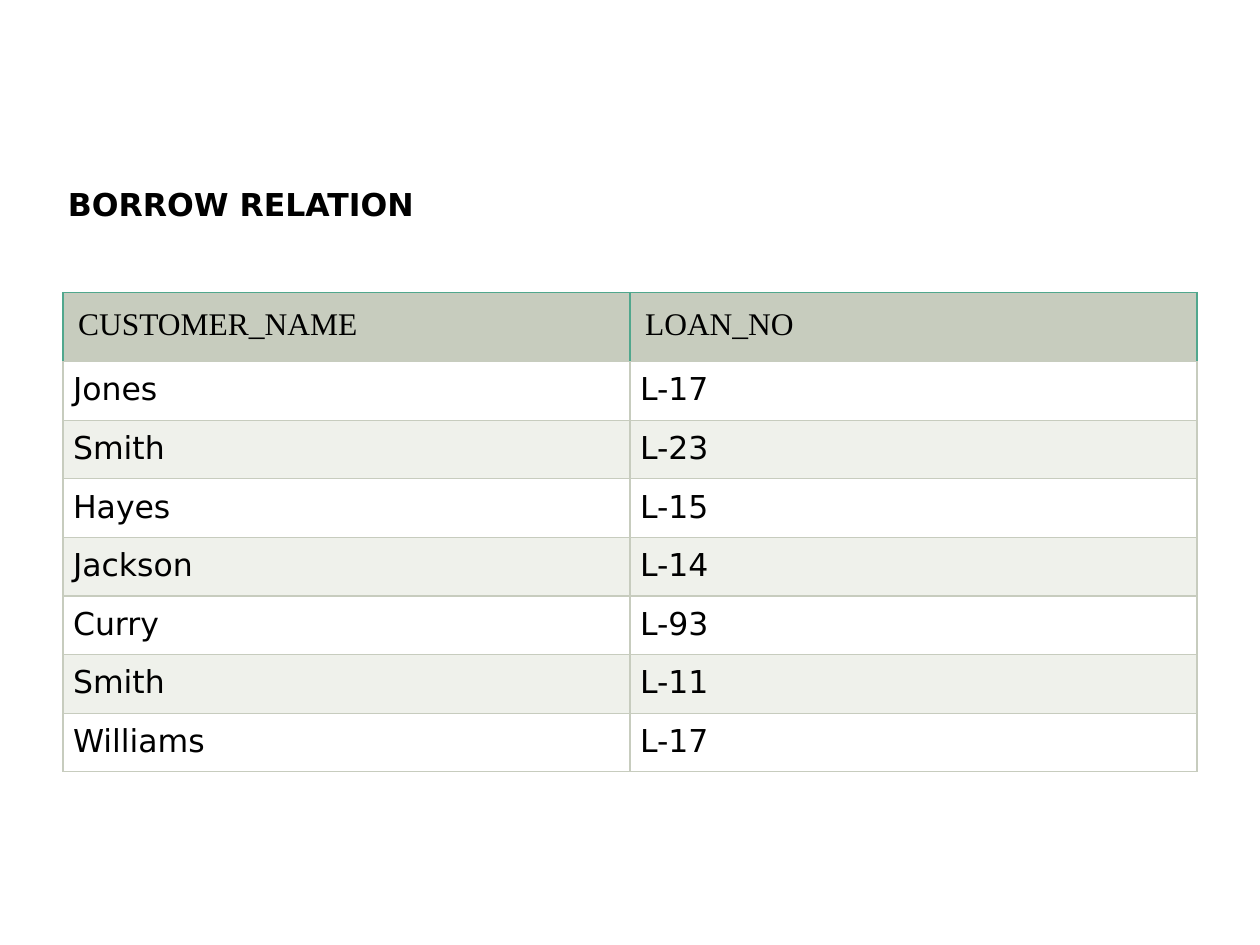
"""Build a slide that shows the borrow relation as a two-column table."""
from dataclasses import dataclass

from lxml import etree
from pptx import Presentation
from pptx.dml.color import RGBColor
from pptx.enum.text import MSO_AUTO_SIZE
from pptx.oxml.ns import qn
from pptx.util import Inches, Pt

FIT_SHAPE = MSO_AUTO_SIZE.SHAPE_TO_FIT_TEXT
SLIDE_WIDTH, SLIDE_HEIGHT = Inches(10), Inches(7.5)


@dataclass(frozen=True)
class Theme:
    """Colours, fonts and type sizes of the slide."""
    text: str = "000000"
    header: str = "C7CCBE"
    accent: str = "50A78D"
    bands: tuple[str, str] = ("FFFFFF", "EFF1EB")
    body_font: str = "DejaVu Sans"
    header_font: str = "Times New Roman"
    size: float = 18
    border: float = 0.75


THEME = Theme()


@dataclass(frozen=True)
class RowStyle:
    """Look of one table row, with lengths in inches."""
    fill: str
    font: str
    height: float
    inset: float
    edge: str


@dataclass(frozen=True)
class Loan:
    """One tuple of the borrow relation."""
    customer: str
    number: str


HEADER = Loan("CUSTOMER_NAME", "LOAN_NO")
LOANS = [
    Loan("Jones", "L-17"),
    Loan("Smith", "L-23"),
    Loan("Hayes", "L-15"),
    Loan("Jackson", "L-14"),
    Loan("Curry", "L-93"),
    Loan("Smith", "L-11"),
    Loan("Williams", "L-17"),
]
HEADER_STYLE = RowStyle(THEME.header, THEME.header_font, 0.55, 0.12, THEME.accent)
BAND_STYLES = [RowStyle(fill, THEME.body_font, 0.465, 0.08, THEME.header)
               for fill in THEME.bands]


def add_run(paragraph, text: str, font_name: str, bold: bool = False) -> None:
    """Add one run in the theme's size and text colour."""
    run = paragraph.add_run()
    run.text = text
    run.font.name = font_name
    run.font.size = Pt(THEME.size)
    run.font.bold = bold
    run.font.color.rgb = RGBColor.from_string(THEME.text)


def set_borders(cell, edge: str) -> None:
    """Line the cell with the edge colour, and its bottom with the header colour."""
    properties = cell._tc.get_or_add_tcPr()
    colors = {"a:lnL": edge, "a:lnR": edge, "a:lnT": edge, "a:lnB": THEME.header}
    for tag, color in colors.items():
        line = etree.SubElement(properties, qn(tag), w=str(Pt(THEME.border)))
        fill = etree.SubElement(line, qn("a:solidFill"))
        etree.SubElement(fill, qn("a:srgbClr"), val=color)


def fill_cell(cell, text: str, style: RowStyle) -> None:
    """Write and style one table cell."""
    inset = Inches(style.inset)
    cell.margin_left = cell.margin_right = inset
    cell.margin_top = cell.margin_bottom = inset
    set_borders(cell, style.edge)
    cell.fill.solid()
    cell.fill.fore_color.rgb = RGBColor.from_string(style.fill)
    add_run(cell.text_frame.paragraphs[0], text, style.font)


def add_title(slide, text: str) -> None:
    """Add the bold heading above the table."""
    box = slide.shapes.add_textbox(Inches(0.44), Inches(1.42), Inches(3.05), Inches(0.4))
    box.text_frame.word_wrap = False
    box.text_frame.auto_size = FIT_SHAPE
    add_run(box.text_frame.paragraphs[0], text, THEME.body_font, bold=True)


def add_loan_table(slide, loans: list[Loan]) -> None:
    """Add the header row and the banded loan rows."""
    styles = [HEADER_STYLE] + [BAND_STYLES[index % 2] for index in range(len(loans))]
    height = sum(Inches(style.height) for style in styles)
    left = int(SLIDE_WIDTH * 0.05)
    table = slide.shapes.add_table(len(styles), 2, left, Inches(2.32),
                                   SLIDE_WIDTH - 2 * left, height).table
    table.first_row = table.horz_banding = False
    for row, loan, style in zip(table.rows, [HEADER, *loans], styles):
        row.height = Inches(style.height)
        for cell, text in zip(row.cells, (loan.customer, loan.number)):
            fill_cell(cell, text, style)


def main() -> None:
    """Build and save the presentation."""
    presentation = Presentation()
    presentation.slide_width, presentation.slide_height = SLIDE_WIDTH, SLIDE_HEIGHT
    slide = presentation.slides.add_slide(presentation.slide_layouts[6])
    add_loan_table(slide, LOANS)
    add_title(slide, "BORROW RELATION")
    presentation.save("out.pptx")


if __name__ == "__main__":
    main()
